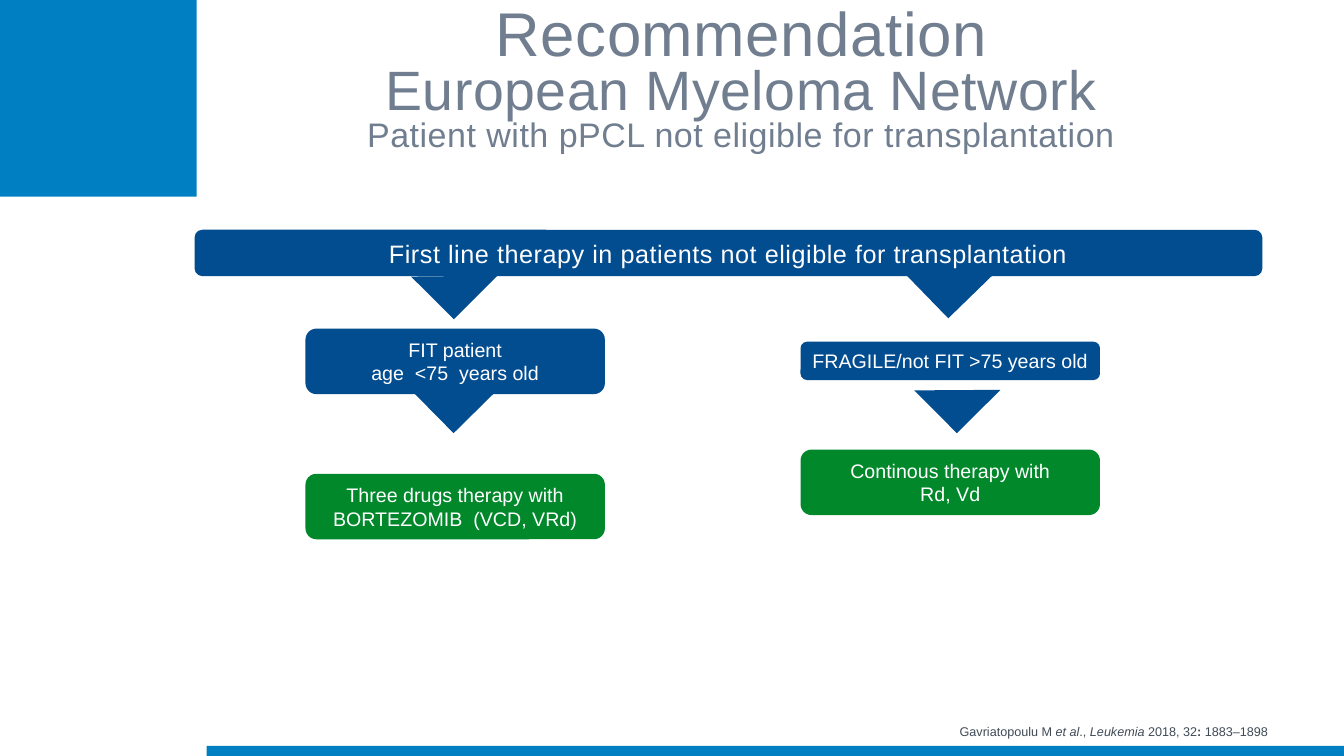
from pptx import Presentation
from pptx.dml.color import RGBColor
from pptx.enum.shapes import MSO_SHAPE
from pptx.enum.text import MSO_ANCHOR, PP_ALIGN
from pptx.util import Inches, Pt

COLORS = {"sky": "0080C2", "navy": "024C90", "green": "00882B",
          "white": "FFFFFF", "slate": "707E90", "ink": "404B57"}

deck = Presentation()
deck.slide_width, deck.slide_height = Inches(13.33), Inches(7.5)
slide = deck.slides.add_slide(deck.slide_layouts[6])


def add_block(kind, place, color, turn=0):
    block = slide.shapes.add_shape(kind, *map(Inches, place))
    block.shadow.inherit = False
    block.fill.solid()
    block.fill.fore_color.rgb = RGBColor.from_string(COLORS[color])
    block.line.fill.background()
    block.rotation = turn
    return block


def add_run(para, text, size, color, track=0, **style):
    """Add a run of Arial text; track is the letter spacing in points."""
    run = para.add_run()
    run.text = text
    for name, value in {"name": "Arial", "size": Pt(size), **style}.items():
        setattr(run.font, name, value)
    run.font.color.rgb = RGBColor.from_string(COLORS[color])
    if track:
        run._r.get_or_add_rPr().set("spc", str(round(track * 100)))


# Frame of the slide
for place in [(0, 0, 1.95, 1.95), (2.05, 7.4, 11.28, 0.1)]:
    add_block(MSO_SHAPE.RECTANGLE, place, "sky")

# Pointers: right triangles turned corner down
for left, top, turn in [(9.11, 2.43, 315.8), (9.19, 3.57, 315.1),
                        (4.2, 3.57, 315.4), (4.2, 2.44, 314.9)]:
    add_block(MSO_SHAPE.RIGHT_TRIANGLE, (left, top, 0.61, 0.6), "navy", turn)

# Therapy boxes
FIT, FRAIL, WIDE = 3.03, 7.94, 2.97
boxes = [
    ((FIT, 3.26, WIDE, 0.65), "navy", 14, 0,
     ["FIT patient", "age  <75  years old"]),
    ((FRAIL, 3.39, WIDE, 0.38), "navy", 14, 0,
     ["FRAGILE/not FIT >75 years old"]),
    ((FIT, 4.7, WIDE, 0.65), "green", 14, 0,
     ["Three drugs therapy with BORTEZOMIB  (VCD, VRd)"]),
    ((FRAIL, 4.46, WIDE, 0.65), "green", 14, 0,
     ["Continous therapy with", "Rd, Vd"]),
    ((1.93, 2.28, 10.59, 0.46), "navy", 18, 0.4,
     ["First line therapy in patients not eligible for transplantation"]),
]
for place, color, size, track, lines in boxes:
    frame = add_block(MSO_SHAPE.ROUNDED_RECTANGLE, place, color).text_frame
    frame.word_wrap = True
    frame.vertical_anchor = MSO_ANCHOR.MIDDLE
    for side in ("left", "right", "top", "bottom"):
        setattr(frame, f"margin_{side}", Inches(0.06))
    for i, line in enumerate(lines):
        para = frame.add_paragraph() if i else frame.paragraphs[0]
        para.alignment = PP_ALIGN.CENTER
        add_run(para, line, size, "white", track)

# Source line
place = (9.42, 7.13, 3.3, 0.25)
frame = slide.shapes.add_textbox(*map(Inches, place)).text_frame
frame.word_wrap = False
for text, style in [("Gavriatopoulu M ", {}), ("et al", {"italic": True}),
                    ("., ", {}), ("Leukemia ", {"italic": True}),
                    ("2018, 32", {}), (": ", {"bold": True}),
                    ("1883–1898", {})]:
    add_run(frame.paragraphs[0], text, 9, "ink", **style)

# Title
place = (2.14, 0.13, 10.43, 1.4)
frame = slide.shapes.add_textbox(*map(Inches, place)).text_frame
frame.word_wrap = True
frame.vertical_anchor = MSO_ANCHOR.BOTTOM
for side in ("left", "right", "top", "bottom"):
    setattr(frame, f"margin_{side}", 0)
titles = [("Recommendation", 44.1), ("European Myeloma Network", 39.6),
          ("Patient with pPCL not eligible for transplantation", 24.3)]
for i, (text, size) in enumerate(titles):
    para = frame.add_paragraph() if i else frame.paragraphs[0]
    para.alignment = PP_ALIGN.CENTER
    para.line_spacing = 0.8
    add_run(para, text, size, "slate", 0.4)

deck.save("out.pptx")
